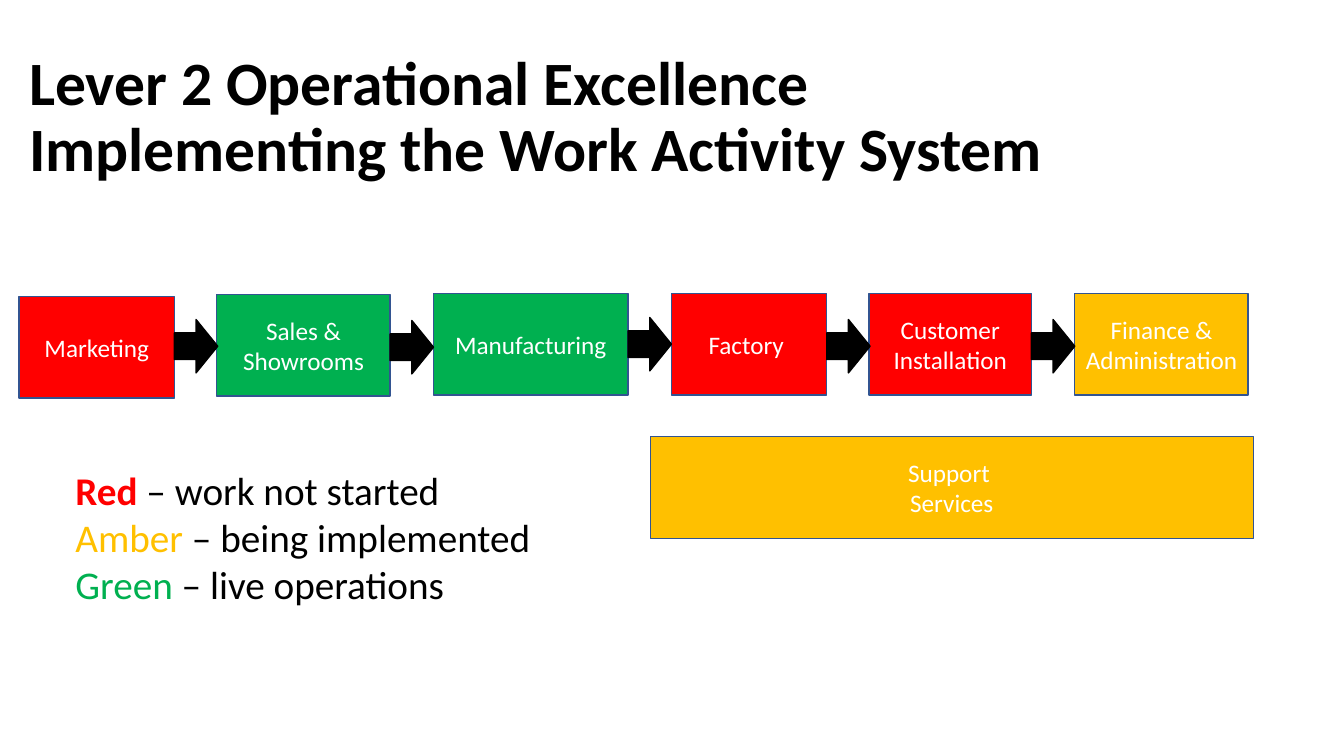
from dataclasses import dataclass

from pptx import Presentation
from pptx.dml.color import RGBColor
from pptx.enum.shapes import MSO_SHAPE
from pptx.enum.text import MSO_ANCHOR, MSO_AUTO_SIZE, PP_ALIGN
from pptx.util import Inches, Pt

RECT = MSO_SHAPE.RECTANGLE
ARROW = MSO_SHAPE.RIGHT_ARROW
MIDDLE = MSO_ANCHOR.MIDDLE
CENTER = PP_ALIGN.CENTER
GROW = MSO_AUTO_SIZE.SHAPE_TO_FIT_TEXT


@dataclass(frozen=True)
class Theme:
    font: str = "Calibri"
    red: str = "FF0000"
    amber: str = "FFC000"
    green: str = "00B050"
    black: str = "000000"
    white: str = "FFFFFF"
    edge: str = "325491"
    title: int = 44
    legend: int = 28
    label: int = 18


THEME = Theme()
BOX_H = 1.01
ARROW_W, ARROW_H = 0.43, 0.53

STEPS = [
    ("Marketing", 0.19, 2.94, 1.54, THEME.red),
    ("Sales &\nShowrooms", 2.15, 2.92, 1.72, THEME.green),
    ("Manufacturing", 4.3, 2.91, 1.93, THEME.green),
    ("Factory ", 6.66, 2.91, 1.54, THEME.red),
    ("Customer Installation", 8.62, 2.91, 1.61, THEME.red),
    ("Finance &\nAdministration", 10.66, 2.91, 1.72, THEME.amber),
]
ARROW_TOPS = [3.17, 3.18, 3.15, 3.17, 3.17]

LEGEND = [
    ("Red", " – work not started", THEME.red, True),
    ("Amber", " – being implemented", THEME.amber, False),
    ("Green", " – live operations", THEME.green, False),
]


def style(run, size, color, bold=False):
    run.font.name = THEME.font
    run.font.size = Pt(size)
    run.font.bold = bold
    run.font.color.rgb = RGBColor.from_string(color)


def add_shape(slide, kind, area, fill, line):
    shape = slide.shapes.add_shape(kind, *map(Inches, area))
    shape.shadow.inherit = False
    shape.fill.solid()
    shape.fill.fore_color.rgb = RGBColor.from_string(fill)
    shape.line.color.rgb = RGBColor.from_string(line)
    shape.line.width = Pt(1)
    return shape


def add_box(slide, text, left, top, width, fill):
    box = add_shape(slide, RECT, (left, top, width, BOX_H), fill, THEME.edge)
    frame = box.text_frame
    frame.word_wrap = True
    frame.vertical_anchor = MIDDLE
    frame.text = text
    for para in frame.paragraphs:
        para.alignment = CENTER
        for run in para.runs:
            style(run, THEME.label, THEME.white)


def add_frame(slide, *area):
    frame = slide.shapes.add_textbox(*map(Inches, area)).text_frame
    frame.word_wrap = True
    return frame


def add_title(slide):
    frame = add_frame(slide, 0.19, 0.45, 12.87, 1.45)
    frame.vertical_anchor = MIDDLE
    para = frame.paragraphs[0]
    para.text = "Lever 2 Operational Excellence\vImplementing the Work Activity System"
    para.line_spacing = 0.9
    para.font.size = Pt(THEME.title)
    for run in para.runs:
        style(run, THEME.title, THEME.black, True)


def add_legend(slide):
    frame = add_frame(slide, 0.65, 4.58, 4.91, 1.51)
    frame.auto_size = GROW
    frame.text = "\n".join(name for name, *rest in LEGEND)
    for para, (name, note, color, bold) in zip(frame.paragraphs, LEGEND):
        style(para.runs[0], THEME.legend, color, bold)
        run = para.add_run()
        run.text = note
        style(run, THEME.legend, THEME.black)


def add_flow(slide):
    for step in STEPS:
        add_box(slide, *step)
    for (name, left, top, width, fill), y in zip(STEPS, ARROW_TOPS):
        area = (left + width, y, ARROW_W, ARROW_H)
        add_shape(slide, ARROW, area, THEME.black, THEME.black)


def main():
    deck = Presentation()
    deck.slide_width = Inches(13.33)
    deck.slide_height = Inches(7.5)
    slide = deck.slides.add_slide(deck.slide_layouts[6])
    add_title(slide)
    add_flow(slide)
    add_box(slide, "Support \nServices", 6.45, 4.33, 5.98, THEME.amber)
    add_legend(slide)
    deck.save("out.pptx")


if __name__ == "__main__":
    main()
